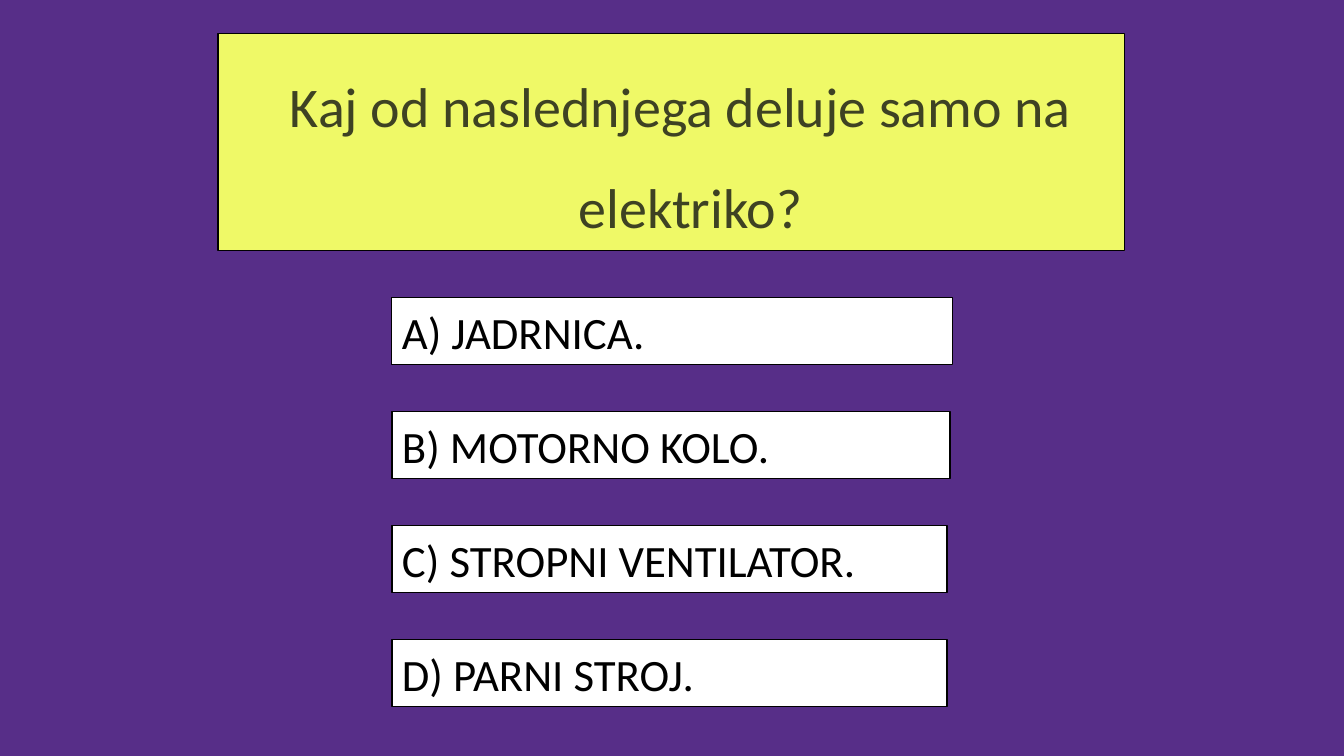
"""Build a quiz slide with one question and four answer buttons."""
import pptx
import pptx.dml.color
import pptx.enum.shapes
import pptx.enum.text
import pptx.util

PX = 12192000 / 1344
COLORS = {"back": "572E88", "lemon": "EFF967", "olive": "3E4223",
          "white": "FFFFFF", "black": "000000"}
ANSWERS = [("A) JADRNICA.", 561), ("B) MOTORNO KOLO.", 558),
           ("C) STROPNI VENTILATOR.", 555), ("D) PARNI STROJ.", 555)]
TOP, STEP = 298, 114


def px(count):
    return pptx.util.Emu(round(count * PX))


def style(shape, fill, ink, size):
    rgb = pptx.dml.color.RGBColor.from_string
    shape.fill.solid()
    shape.fill.fore_color.rgb = rgb(COLORS[fill])
    shape.line.color.rgb = rgb(COLORS["black"])
    shape.line.width = pptx.util.Pt(0.75)
    frame = shape.text_frame
    frame.word_wrap = True
    frame.auto_size = pptx.enum.text.MSO_AUTO_SIZE.NONE
    font = frame.paragraphs[0].font
    font.name = "Calibri"
    font.size = pptx.util.Pt(size)
    font.color.rgb = rgb(COLORS[ink])


deck = pptx.Presentation()
deck.slide_width, deck.slide_height = px(1344), px(756)
slide = deck.slides.add_slide(deck.slide_layouts[1])
back = slide.background.fill
back.solid()
back.fore_color.rgb = pptx.dml.color.RGBColor.from_string(COLORS["back"])
title = slide.shapes.title.element
title.getparent().remove(title)

query = slide.placeholders[1]
query.left, query.top, query.width, query.height = px(218), px(33), px(907), px(218)
query.text_frame.text = "Kaj od naslednjega deluje samo na elektriko?"
para = query.text_frame.paragraphs[0]
para.alignment = pptx.enum.text.PP_ALIGN.CENTER
para.line_spacing = 1.5
para.space_before = pptx.util.Pt(0)
props = para._p.get_or_add_pPr()
props.set("marL", str(px(38)))
props.set("indent", str(px(-20)))
props.append(pptx.oxml.parse_xml(
    '<a:buNone xmlns:a="http://schemas.openxmlformats.org/drawingml/2006/main"/>'))
style(query, "lemon", "olive", 40)

for row, (text, width) in enumerate(ANSWERS):
    button = slide.shapes.add_shape(
        pptx.enum.shapes.MSO_SHAPE.ACTION_BUTTON_CUSTOM,
        px(392), px(TOP + row * STEP), px(width), px(67))
    button.shadow.inherit = False
    button.text_frame.text = text
    button.text_frame.vertical_anchor = pptx.enum.text.MSO_ANCHOR.MIDDLE
    button.text_frame.paragraphs[0].alignment = pptx.enum.text.PP_ALIGN.LEFT
    style(button, "white", "black", 32)

deck.save("out.pptx")
